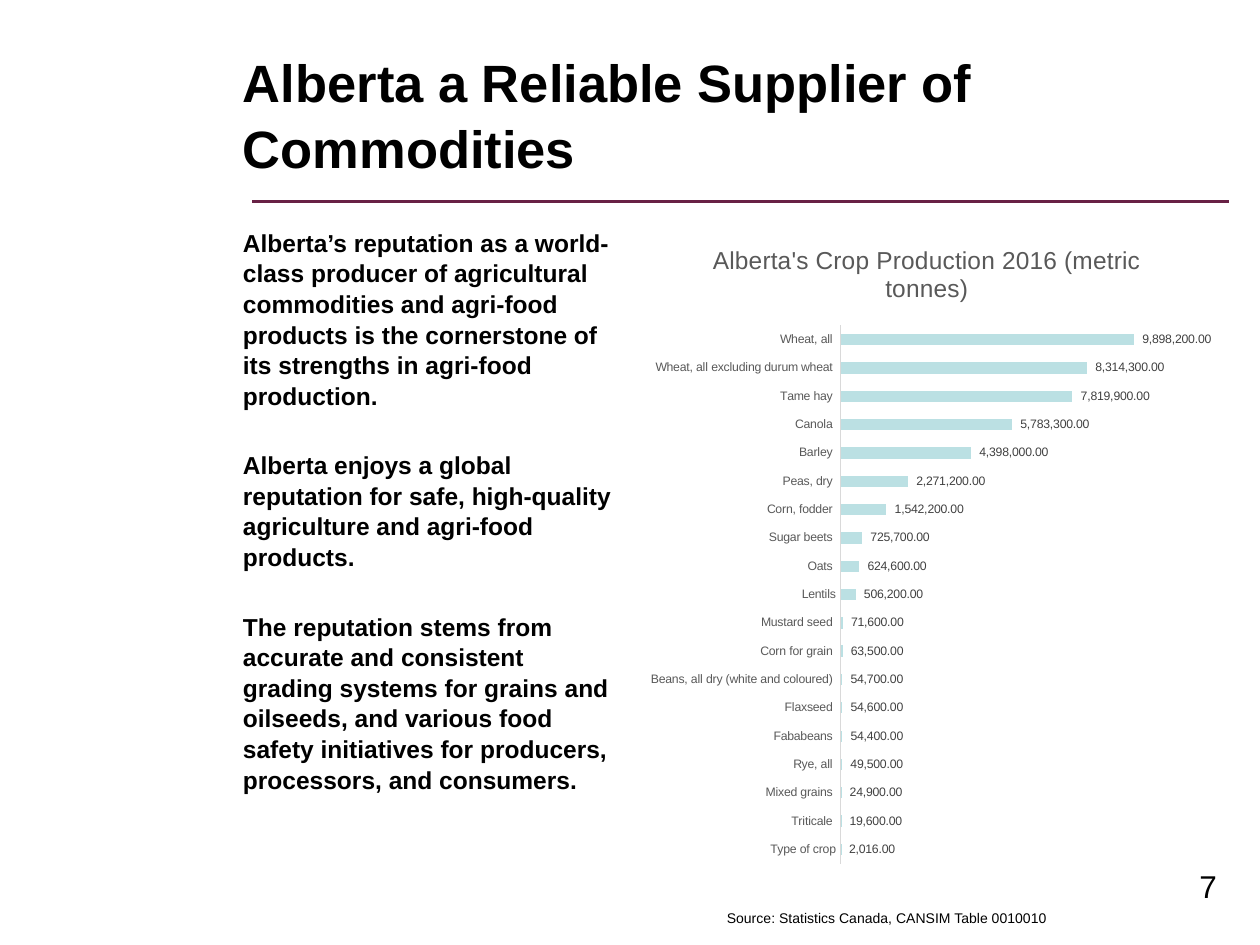
from lxml import etree
from pptx import Presentation
from pptx.chart.data import CategoryChartData
from pptx.dml.color import RGBColor
from pptx.enum.chart import XL_CHART_TYPE, XL_LABEL_POSITION, XL_TICK_MARK
from pptx.oxml import parse_xml
from pptx.oxml.ns import nsdecls, qn
from pptx.util import Inches, Pt

FONT = "Arial"
BLACK = RGBColor(0x00, 0x00, 0x00)
MAROON = RGBColor(0x68, 0x21, 0x45)
PALE_TEAL = RGBColor(0xBB, 0xE0, 0xE3)
AXIS_GREY = RGBColor(0xD9, 0xD9, 0xD9)
TEXT_GREY = RGBColor(0x59, 0x59, 0x59)
LABEL_GREY = RGBColor(0x40, 0x40, 0x40)
NUMBER_FORMAT = '_(* #,##0.00_);_(* \\(#,##0.00\\);_(* "-"??_);_(@_)'

REPUTATION = [
    "Alberta’s reputation as a world-class producer of agricultural commodities "
    "and agri-food products is the cornerstone of its strengths in agri-food production.",
    "Alberta enjoys a global reputation for safe, high-quality agriculture and "
    "agri-food products.",
    "The reputation stems from accurate and consistent grading systems for grains "
    "and oilseeds, and various food safety initiatives for producers, processors, "
    "and consumers.",
]

# Listed from the bottom bar to the top bar
CROPS = [
    ("Type of crop", 2016),
    ("Triticale ", 19600),
    ("Mixed grains ", 24900),
    ("Rye, all ", 49500),
    ("Fababeans ", 54400),
    ("Flaxseed ", 54600),
    ("Beans, all dry (white and coloured) ", 54700),
    ("Corn for grain ", 63500),
    ("Mustard seed ", 71600),
    ("Lentils", 506200),
    ("Oats ", 624600),
    ("Sugar beets ", 725700),
    ("Corn, fodder ", 1542200),
    ("Peas, dry ", 2271200),
    ("Barley ", 4398000),
    ("Canola ", 5783300),
    ("Tame hay ", 7819900),
    ("Wheat, all excluding durum wheat ", 8314300),
    ("Wheat, all ", 9898200),
]


def style_font(font, size, color, bold=False):
    font.name = FONT
    font.size = Pt(size)
    font.bold = bold
    font.color.rgb = color


def add_text(slide, box, paragraphs, size, bold=False, gap=0, line_spacing=1.0):
    frame = slide.shapes.add_textbox(*map(Inches, box)).text_frame
    frame.word_wrap = True
    frame.text = "\n".join(paragraphs)
    for index, paragraph in enumerate(frame.paragraphs):
        paragraph.line_spacing = line_spacing
        if index:
            paragraph.space_before = Pt(gap)
        for run in paragraph.runs:
            style_font(run.font, size, BLACK, bold)


def add_rule(slide, left, right, top):
    rule = slide.shapes.add_connector(
        1, Inches(left), Inches(top), Inches(right), Inches(top))
    rule.line.color.rgb = MAROON
    rule.line.width = Pt(1.5)
    etree.SubElement(rule._element.spPr, qn("a:effectLst"))


def set_plot_area(chart, x, y, width, height):
    plot_area = chart._chartSpace.chart.plotArea
    for old_layout in plot_area.findall(qn("c:layout")):
        plot_area.remove(old_layout)
    plot_area.insert(0, parse_xml(
        f'<c:layout {nsdecls("c")}><c:manualLayout>'
        '<c:layoutTarget val="inner"/><c:xMode val="edge"/><c:yMode val="edge"/>'
        f'<c:x val="{x}"/><c:y val="{y}"/><c:w val="{width}"/><c:h val="{height}"/>'
        '</c:manualLayout></c:layout>'))


def add_crop_chart(slide, box):
    data = CategoryChartData(number_format=NUMBER_FORMAT)
    data.categories = [crop for crop, _ in CROPS]
    data.add_series("Series 1", [tonnes for _, tonnes in CROPS])
    chart = slide.shapes.add_chart(
        XL_CHART_TYPE.BAR_CLUSTERED, *map(Inches, box), data).chart
    style_font(chart.font, 10, BLACK)
    chart.has_legend = False

    # Chart title
    chart.has_title = True
    heading = chart.chart_title.text_frame
    heading.text = "Alberta's Crop Production 2016 (metric tonnes)"
    style_font(heading.paragraphs[0].runs[0].font, 14, TEXT_GREY)
    chart.chart_title.include_in_layout = False

    # Axes
    crop_axis = chart.category_axis
    crop_axis.major_tick_mark = crop_axis.minor_tick_mark = XL_TICK_MARK.NONE
    crop_axis.has_major_gridlines = False
    crop_axis.format.line.color.rgb = AXIS_GREY
    crop_axis.format.line.width = Pt(0.75)
    style_font(crop_axis.tick_labels.font, 7, TEXT_GREY)
    tonnes_axis = chart.value_axis
    tonnes_axis.visible = False
    tonnes_axis.has_major_gridlines = False
    tonnes_axis.minimum_scale = 0
    tonnes_axis.maximum_scale = 12_000_000

    # Bars and their values
    bars = chart.plots[0]
    bars.vary_by_categories = False
    bars.gap_width = 150
    bars.overlap = -25
    fill = bars.series[0].format.fill
    fill.solid()
    fill.fore_color.rgb = PALE_TEAL
    labels = bars.series[0].data_labels
    labels.show_value = True
    labels.number_format = NUMBER_FORMAT
    labels.number_format_is_linked = False
    labels.position = XL_LABEL_POSITION.OUTSIDE_END
    style_font(labels.font, 7, LABEL_GREY)
    set_plot_area(chart, 0.35, 0.16, 0.62, 0.82)


def main():
    presentation = Presentation()
    presentation.slide_width = Inches(10)
    presentation.slide_height = Inches(7.5)
    slide = presentation.slides.add_slide(presentation.slide_layouts[6])

    # Heading
    add_rule(slide, 2, 9.75, 1.6)
    add_text(slide, (1.83, 0.33, 8.42, 1.25),
             ["Alberta a Reliable Supplier of Commodities"],
             30, bold=True, line_spacing=1.04)

    # Reputation text beside the crop chart
    add_text(slide, (1.83, 1.75, 3.17, 4.95), REPUTATION,
             14, bold=True, gap=22.4, line_spacing=1.04)
    add_crop_chart(slide, (5.08, 1.75, 4.56, 5.21))

    # Page number and source
    add_text(slide, (9.42, 6.83, 0.58, 0.52), ["7"], 18)
    add_text(slide, (5.67, 7.17, 4, 0.24),
             ["Source: Statistics Canada, CANSIM Table 0010010"], 8)

    presentation.save("out.pptx")


if __name__ == "__main__":
    main()
